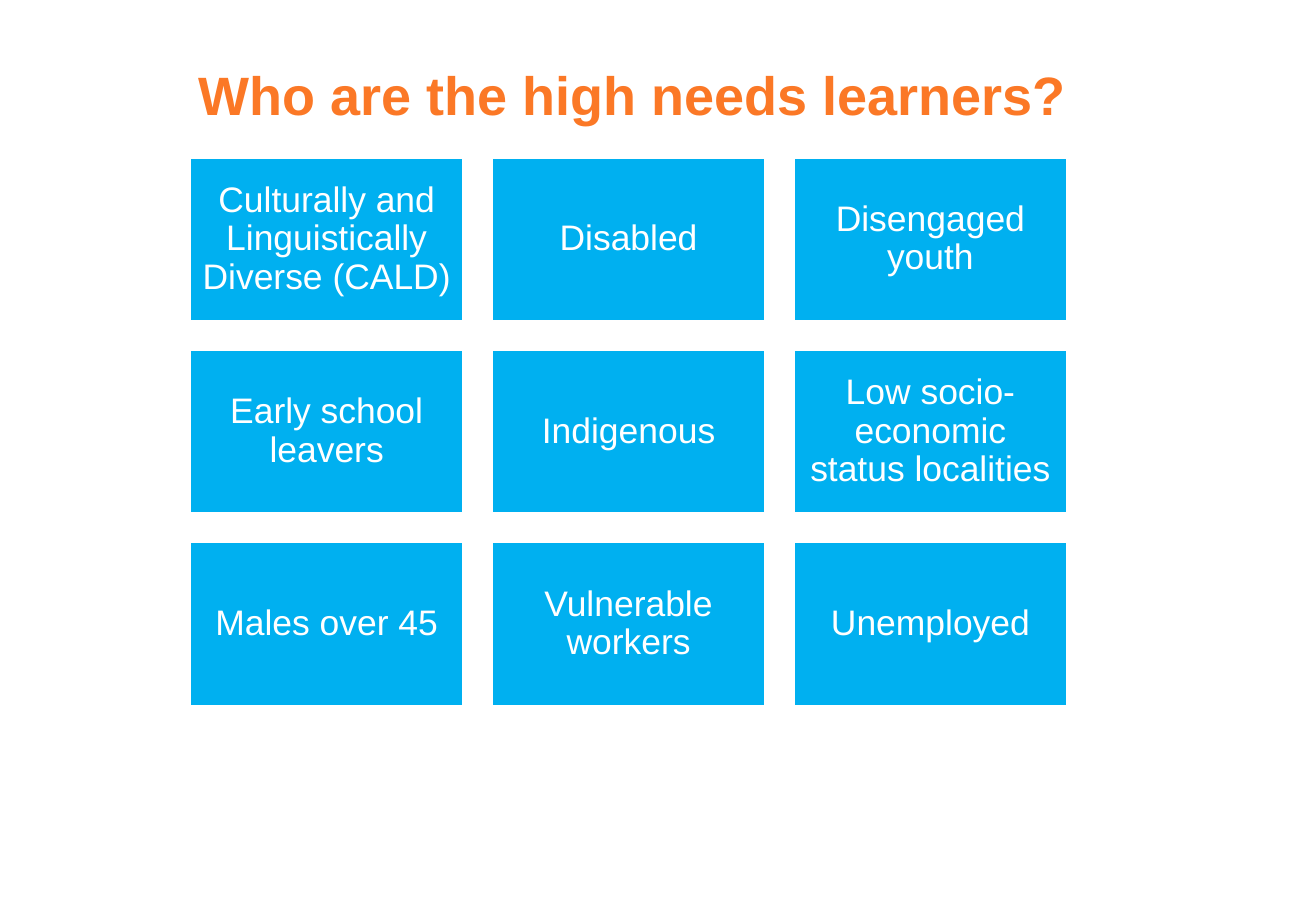
from collections import namedtuple
from dataclasses import dataclass

from pptx import Presentation
from pptx import util as u
from pptx.dml.color import RGBColor
from pptx.enum import shapes, text

Box = namedtuple("Box", "left top width height")


@dataclass(frozen=True)
class Theme:
    font: str = "Arial"
    orange: RGBColor = RGBColor(0xFB, 0x78, 0x26)
    blue: RGBColor = RGBColor(0x00, 0xB0, 0xF0)
    white: RGBColor = RGBColor(0xFF, 0xFF, 0xFF)
    title_size: int = 32
    tile_size: int = 21


THEME = Theme()
TITLE_BOX = Box(3.1, 1.04, 20.27, 2.36)
GRID_BOX = Box(3.96, 3.28, 18.36, 11.49)
COLUMNS = 3
GAP = 0.57
LEARNERS = [
    "Culturally and Linguistically Diverse (CALD)", "Disabled", "Disengaged youth",
    "Early school leavers", "Indigenous", "Low socio-economic status localities",
    "Males over 45", "Vulnerable workers", "Unemployed",
]


def set_all(target, values):
    for name, value in values.items():
        setattr(target, name, value)


def write(shape, wording, color, size, bold, frame_format, line_spacing):
    """Put one centred paragraph into the shape."""
    frame = shape.text_frame
    set_all(frame, {"word_wrap": True, "auto_size": text.MSO_AUTO_SIZE.NONE, **frame_format})
    para = frame.paragraphs[0]
    set_all(para, {"alignment": text.PP_ALIGN.CENTER, "line_spacing": line_spacing,
                   "space_before": u.Pt(0)})
    span = para.add_run()
    span.text = wording
    set_all(span.font, {"name": THEME.font, "size": u.Pt(size), "bold": bold})
    span.font.color.rgb = color


def add_title(page, box, wording):
    title = page.shapes.title
    set_all(title, {side: u.Cm(length) for side, length in box._asdict().items()})
    frame_format = {"vertical_anchor": text.MSO_ANCHOR.TOP, "margin_top": u.Cm(0.25)}
    write(title, wording, THEME.orange, THEME.title_size, True, frame_format, 1.0)


def add_tile(page, box, wording):
    tile = page.shapes.add_shape(shapes.MSO_SHAPE.RECTANGLE, *map(u.Cm, box))
    tile.shadow.inherit = False
    tile.fill.solid()
    tile.fill.fore_color.rgb = THEME.blue
    tile.line.color.rgb = THEME.white
    tile.line.width = u.Pt(2)
    frame_format = {f"margin_{side}": u.Cm(0.23) for side in ("left", "top", "right", "bottom")}
    frame_format["vertical_anchor"] = text.MSO_ANCHOR.MIDDLE
    write(tile, wording, THEME.white, THEME.tile_size, False, frame_format, 0.9)


def add_tile_grid(page, box, labels):
    rows = -(-len(labels) // COLUMNS)
    width = (box.width - (COLUMNS - 1) * GAP) / COLUMNS
    height = (box.height - (rows - 1) * GAP) / rows
    for index, label in enumerate(labels):
        row, column = divmod(index, COLUMNS)
        left = box.left + column * (width + GAP)
        top = box.top + row * (height + GAP)
        add_tile(page, Box(left, top, width, height), label)


def main():
    deck = Presentation()
    set_all(deck, {"slide_width": u.Cm(27.51), "slide_height": u.Cm(19.05)})
    page = deck.slides.add_slide(deck.slide_layouts.get_by_name("Title Only"))
    add_title(page, TITLE_BOX, "Who are the high needs learners?")
    add_tile_grid(page, GRID_BOX, LEARNERS)
    deck.save("out.pptx")


if __name__ == "__main__":
    main()
